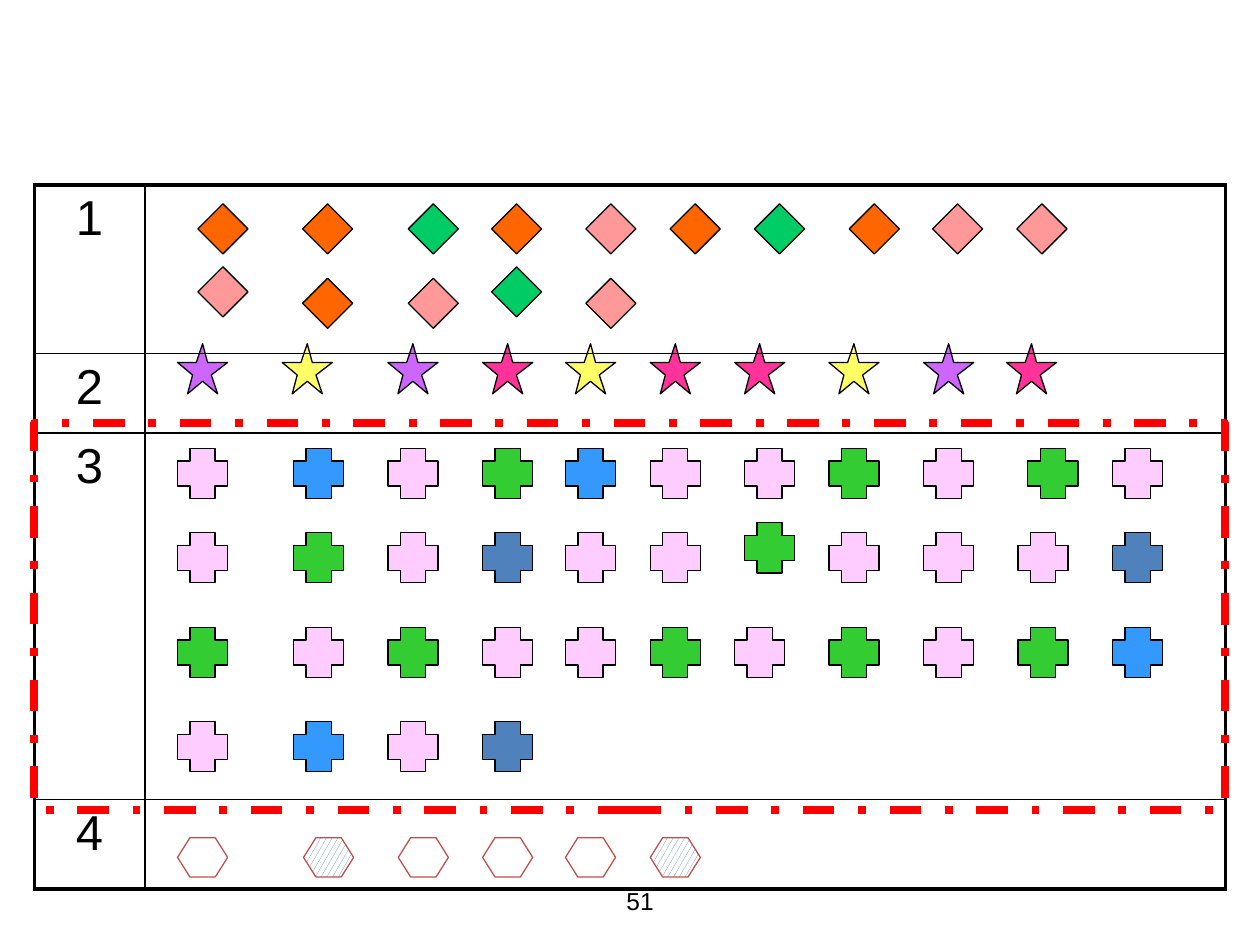
from lxml import etree
from pptx import Presentation
from pptx.dml.color import RGBColor
from pptx.enum import dml, shapes, text
from pptx.oxml import ns
from pptx.util import Cm, Pt

SIZE = 1.01
STAR = [(0, 15), (15, 15), (20, 0), (24, 15), (40, 15),
        (27, 25), (32, 40), (20, 30), (8, 40), (12, 25)]
DIAMOND_COLOURS = {"O": "FF6600", "G": "00CC66", "P": "FF9999"}
STAR_COLOURS = {"V": "CC66FF", "Y": "FFFF66", "R": "FF3399"}
CROSS_COLOURS = {"P": "FFCCFF", "B": "3399FF", "G": "33CC33", "D": "4F81BD"}
DIAMOND_LEFTS = [3.99, 6.1, 8.23, 9.91, 11.81, 13.51, 15.21, 17.12, 18.8, 20.5]
STAR_LEFTS = [3.58, 5.69, 7.82, 9.73, 11.4, 13.11, 14.81, 16.71, 18.62, 20.29]
CROSS_LEFTS = [3.58, 5.92, 7.82, 9.73, 11.4, 13.11, 15.01, 16.71, 18.62, 20.52, 22.43]
HEXAGON_LEFTS = [3.58, 6.12, 8.03, 9.73, 11.4, 13.11]


def colour(value):
    return RGBColor.from_string(value)


class Board:
    """Style and current page of the picture chart."""
    font = "Arial"
    ink = "000000"

    def __init__(self, page):
        self.page = page

    def outline(self, shape, line=ink, width=0.75):
        shape.shadow.inherit = False
        shape.line.color.rgb = colour(line)
        shape.line.width = Pt(width)

    def preset(self, kind, left, top, width=SIZE, height=SIZE, fill=None, line=ink, points=0.75):
        shape = self.page.shapes.add_shape(kind, Cm(left), Cm(top), Cm(width), Cm(height))
        self.outline(shape, line, points)
        if fill:
            shape.fill.solid()
            shape.fill.fore_color.rgb = colour(fill)
        else:
            shape.fill.background()
        return shape

    def preset_row(self, kind, lefts, top, palette, keys, shifts):
        for index, (left, key) in enumerate(zip(lefts, keys)):
            across, down = shifts.get(index, (0, 0))
            self.preset(kind, left + across, top + down, fill=palette[key])

    def star(self, left, top, fill):
        builder = self.page.shapes.build_freeform(*STAR[0], scale=float(Cm(SIZE) / 40))
        builder.add_line_segments(STAR[1:], close=True)
        shape = builder.convert_to_shape(Cm(left), Cm(top))
        self.outline(shape)
        shape.fill.solid()
        shape.fill.fore_color.rgb = colour(fill)

    def hexagon(self, left, top, hatched):
        shape = self.preset(shapes.MSO_SHAPE.HEXAGON, left, top, height=0.79, line="C0504D")
        shape.adjustments[0] = 0.315
        if hatched:
            shape.fill.patterned()
            shape.fill.pattern = dml.MSO_PATTERN.LARGE_CONFETTI
            shape.fill.fore_color.rgb = colour("4F81BD")
            shape.fill.back_color.rgb = colour("FFFFFF")

    def put_text(self, frame, words, size, align):
        frame.text = words
        para = frame.paragraphs[0]
        para.alignment = align
        for span in para.runs:
            span.font.name = self.font
            span.font.size = Pt(size)
            span.font.color.rgb = colour(self.ink)

    def label(self, words, left, top, width, height):
        box = self.page.shapes.add_textbox(Cm(left), Cm(top), Cm(width), Cm(height))
        box.text_frame.word_wrap = True
        self.put_text(box.text_frame, words, 14, text.PP_ALIGN.RIGHT)

    def border(self, cell, side, points):
        properties = cell._tc.get_or_add_tcPr()
        line = etree.SubElement(properties, ns.qn("a:ln" + side), w=str(int(Pt(points))))
        fill = etree.SubElement(line, ns.qn("a:solidFill"))
        etree.SubElement(fill, ns.qn("a:srgbClr"), val=self.ink)

    def table(self, left, top, widths, heights):
        frame = self.page.shapes.add_table(len(heights), len(widths), Cm(left), Cm(top),
                                           Cm(sum(widths)), Cm(sum(heights)))
        table = frame.table
        table.first_row = table.horz_banding = False
        for column, width in zip(table.columns, widths):
            column.width = Cm(width)
        for r, height in enumerate(heights):
            table.rows[r].height = Cm(height)
            for c in range(len(widths)):
                cell = table.cell(r, c)
                outer = {"L": c == 0, "R": c == len(widths) - 1,
                         "T": r == 0, "B": r == len(heights) - 1}
                for side, thick in outer.items():
                    self.border(cell, side, 2.25 if thick else 1)
                cell.fill.background()
            self.put_text(table.cell(r, 0).text_frame, str(r + 1), 28, text.PP_ALIGN.CENTER)


def main():
    deck = Presentation()
    deck.slide_width, deck.slide_height = Cm(25.4), Cm(19.05)
    board = Board(deck.slides.add_slide(deck.slide_layouts[6]))
    diamond, cross = shapes.MSO_SHAPE.DIAMOND, shapes.MSO_SHAPE.CROSS

    board.label("51", 11.3, 17.73, 2.13, 1.32)
    board.preset_row(diamond, DIAMOND_LEFTS, 4.11, DIAMOND_COLOURS, "OOGOPOGOPP", {})
    board.preset_row(diamond, DIAMOND_LEFTS, 5.61, DIAMOND_COLOURS, "POPGP",
                     {0: (0, -0.23), 3: (0, -0.23)})
    for left, key in zip(STAR_LEFTS, "VYVRYRRYVR"):
        board.star(left, 6.93, STAR_COLOURS[key])
    cross_rows = [(9.04, "PBPGBPPGPGP", {9: (0.2, 0)}),
                  (10.74, "PGPDPPGPPPD", {6: (0, -0.2)}),
                  (12.65, "GPGPPGPGPGB", {6: (-0.2, 0)}),
                  (14.55, "PBPD", {})]
    for top, keys, shifts in cross_rows:
        board.preset_row(cross, CROSS_LEFTS, top, CROSS_COLOURS, keys, shifts)
    for index, left in enumerate(HEXAGON_LEFTS):
        board.hexagon(left, 16.89, hatched=index in (1, 5))

    board.table(0.69, 3.73, [2.23, 21.79], [3.4, 1.6, 7.39, 1.8])
    frame = board.preset(shapes.MSO_SHAPE.RECTANGLE, 0.69, 8.53, 24, 7.8,
                         line="FF0000", points=4.5)
    frame.line.dash_style = dml.MSO_LINE.DASH_DOT
    deck.save("out.pptx")


if __name__ == "__main__":
    main()
